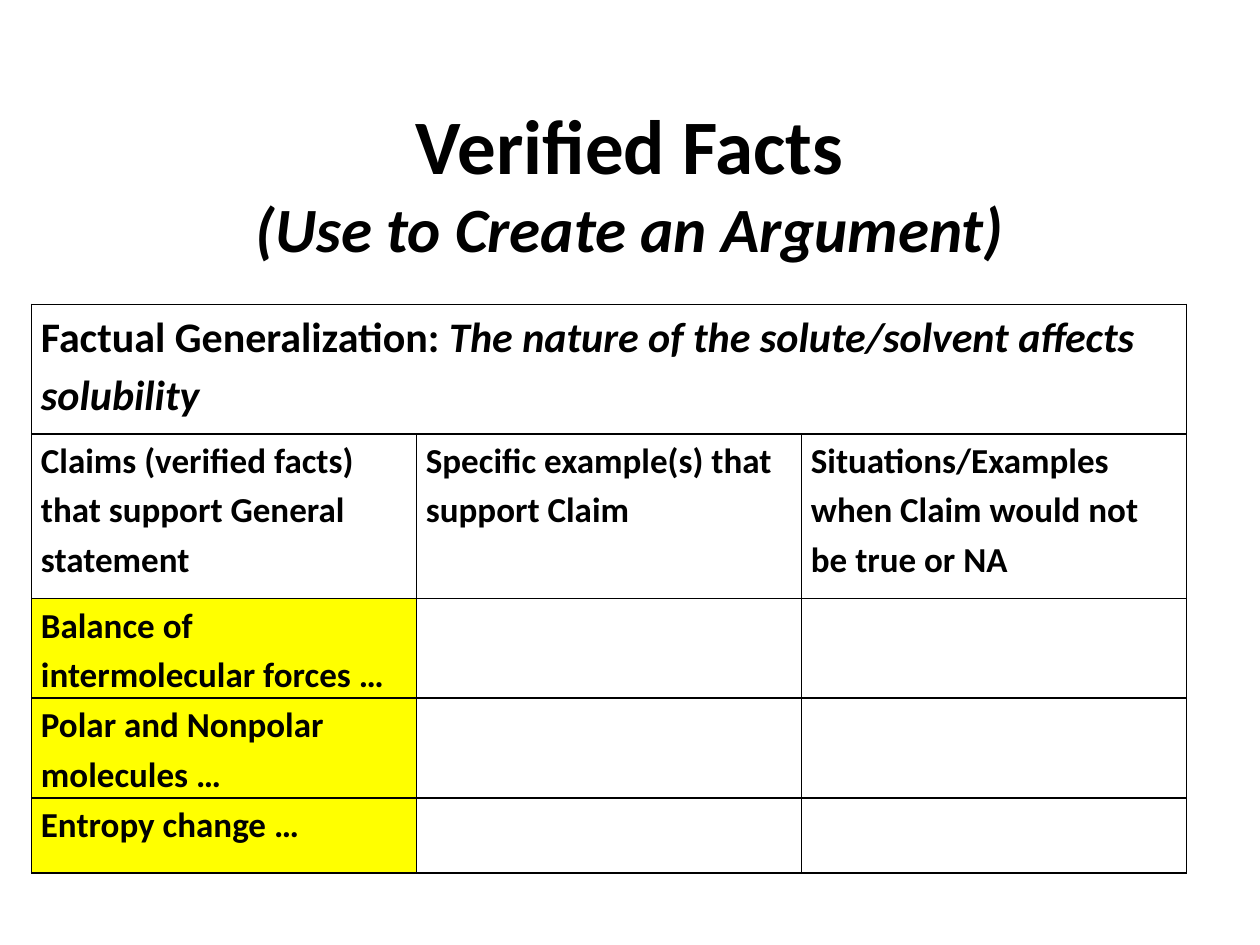
from lxml.etree import SubElement
from pptx import Presentation
from pptx.dml.color import RGBColor as RGB
from pptx.enum.text import MSO_ANCHOR as Anchor, PP_ALIGN as Align
from pptx.oxml.ns import qn
from pptx.util import Pt

HUES = {"ink": "000000", "mark": "FFFF00"}
COLS = [220] * 3
ROWS = [74, 94, 57, 57, 43]
HEADS = [
    "Claims (verified facts) that support General statement",
    "Specific example(s) that support Claim",
    "Situations/Examples when Claim would not be true or NA",
]
CLAIMS = [
    "Balance of intermolecular forces …",
    "Polar and Nonpolar molecules …",
    "Entropy change …",
]


def set_font(para, size=None):
    font = para.font
    font.name, font.bold = "Calibri", True
    font.color.rgb = RGB.from_string(HUES["ink"])
    if size:
        font.size = Pt(size)


def add_run(para, text, size=None, slant=None):
    run = para.add_run()
    run.text = text
    run.font.italic = slant
    if size:
        run.font.size = Pt(size)


def add_title(slide):
    box = slide.shapes.add_textbox(Pt(36), Pt(21.6), Pt(648), Pt(164))
    frame = box.text_frame
    frame.word_wrap = True
    frame.vertical_anchor = Anchor.MIDDLE
    para = frame.paragraphs[0]
    para.alignment = Align.CENTER
    set_font(para)
    add_run(para, "Verified Facts", 44)
    para.add_line_break()
    add_run(para, "(Use to Create an Argument)", 36, True)


def add_edges(cell):
    """Draw thin lines on all four sides, ahead of the fill in the XML."""
    props = cell._tc.get_or_add_tcPr()
    for spot, side in enumerate("LRTB"):
        line = SubElement(props, qn(f"a:ln{side}"), w=str(Pt(1)))
        fill = SubElement(line, qn("a:solidFill"))
        SubElement(fill, qn("a:srgbClr"), val=HUES["ink"])
        props.insert(spot, line)


def style_cell(cell, hue=None):
    cell.margin_left = cell.margin_right = Pt(5.4)
    cell.margin_top = cell.margin_bottom = 0
    if hue:
        cell.fill.solid()
        cell.fill.fore_color.rgb = RGB.from_string(HUES[hue])
    else:
        cell.fill.background()
    add_edges(cell)


def fill_cell(cell, parts, size):
    """Write (text, italic) parts as one paragraph."""
    para = cell.text_frame.paragraphs[0]
    para.line_spacing = 1.15
    set_font(para, size)
    for text, slant in parts:
        add_run(para, text, size, slant)


def add_grid(slide):
    shape = slide.shapes.add_table(len(ROWS), len(COLS), Pt(18), Pt(174),
                                   Pt(sum(COLS)), Pt(sum(ROWS)))
    table = shape.table
    table.first_row = table.horz_banding = False
    for col, width in zip(table.columns, COLS):
        col.width = Pt(width)
    for row, height in zip(table.rows, ROWS):
        row.height = Pt(height)
    for r in range(len(ROWS)):
        for c in range(len(COLS)):
            style_cell(table.cell(r, c), "mark" if r > 1 and c == 0 else None)

    top = table.cell(0, 0)
    top.merge(table.cell(0, 2))
    fill_cell(top, [
        ("Factual Generalization: ", None),
        ("The nature of the solute/solvent affects solubility", True),
    ], 24)
    for c, text in enumerate(HEADS):
        fill_cell(table.cell(1, c), [(text, None)], 20)
    for r, text in enumerate(CLAIMS, 2):
        fill_cell(table.cell(r, 0), [(text, None)], 20)


def main():
    deck = Presentation()
    deck.slide_width, deck.slide_height = Pt(720), Pt(540)
    slide = deck.slides.add_slide(deck.slide_layouts[6])
    add_title(slide)
    add_grid(slide)
    deck.save("out.pptx")


if __name__ == "__main__":
    main()
